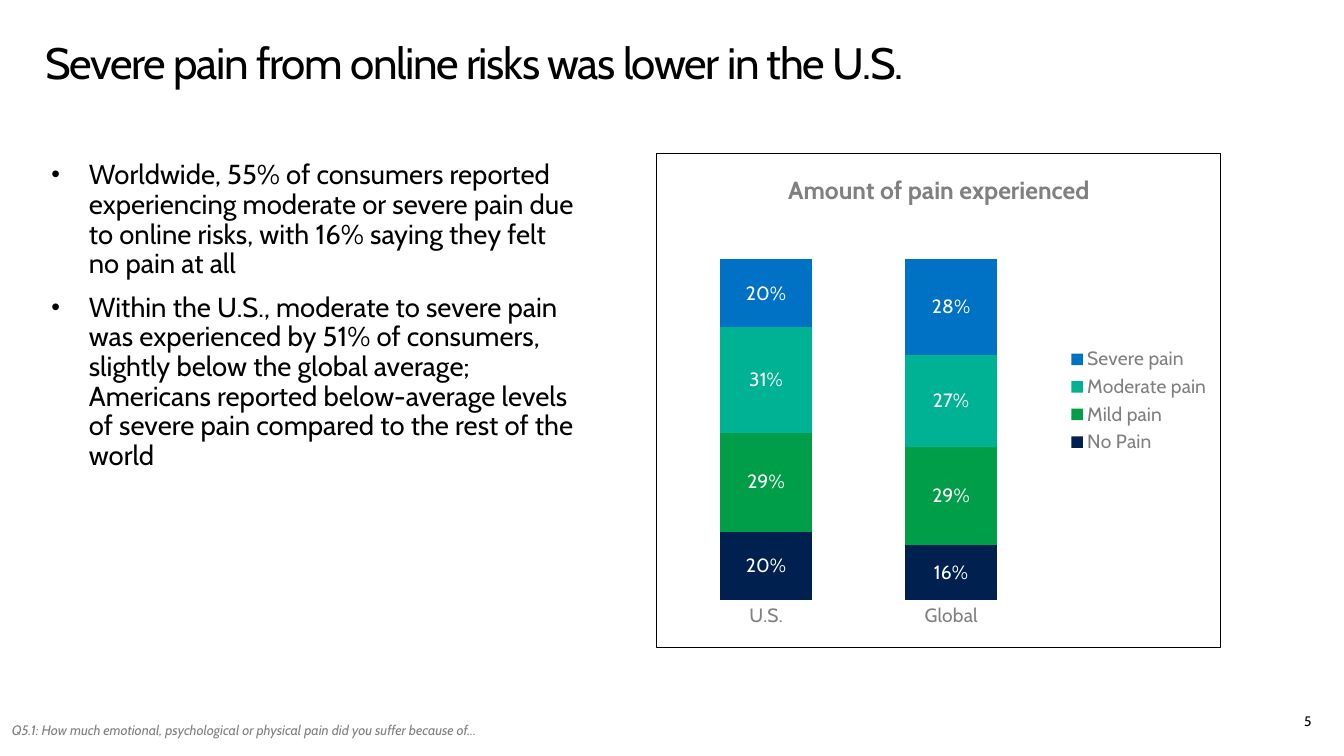
from lxml import etree
from pptx import Presentation
from pptx.chart.data import CategoryChartData
from pptx.dml.color import RGBColor
from pptx.enum.chart import XL_CHART_TYPE, XL_LABEL_POSITION, XL_LEGEND_POSITION, XL_TICK_MARK
from pptx.enum.text import MSO_ANCHOR, PP_ALIGN
from pptx.oxml import parse_xml
from pptx.oxml.ns import nsdecls, qn
from pptx.util import Inches, Pt

FONT = "Cabin"
BLACK = RGBColor(0x00, 0x00, 0x00)
WHITE = RGBColor(0xFF, 0xFF, 0xFF)
GREY = RGBColor(0x80, 0x80, 0x80)
NAVY = RGBColor(0x00, 0x20, 0x50)
GREEN = RGBColor(0x00, 0x9E, 0x49)
TEAL = RGBColor(0x00, 0xB2, 0x94)
BLUE = RGBColor(0x00, 0x72, 0xC6)

BULLETS = [
    "Worldwide, 55% of consumers reported experiencing moderate or severe pain due to online "
    "risks, with 16% saying they felt no pain at all",
    "Within the U.S., moderate to severe pain was experienced by 51% of consumers, slightly "
    "below the global average; Americans reported below-average levels of severe pain compared "
    "to the rest of the world",
]
PAIN_LEVELS = [
    ("No Pain", (0.20, 0.16), NAVY),
    ("Mild pain", (0.29, 0.29), GREEN),
    ("Moderate pain", (0.31, 0.27), TEAL),
    ("Severe pain", (0.20, 0.28), BLUE),
]


def style_font(font, size, color, bold=False, italic=False):
    font.name = FONT
    font.size = Pt(size)
    font.color.rgb = color
    font.bold = bold
    font.italic = italic


def add_text_frame(s, x, y, w, h, inset_x=0.16, inset_y=0.1):
    tf = s.shapes.add_textbox(Inches(x), Inches(y), Inches(w), Inches(h)).text_frame
    tf.word_wrap = True
    tf.margin_left = tf.margin_right = Inches(inset_x)
    tf.margin_top = tf.margin_bottom = Inches(inset_y)
    return tf


def add_run(p, text, size, color, italic=False):
    r = p.add_run()
    r.text = text
    style_font(r.font, size, color, italic=italic)
    return r


def add_title(s, x, y, w, h):
    p = add_text_frame(s, x, y, w, h).paragraphs[0]
    p.line_spacing = 0.9
    r = add_run(p, "Severe pain from online risks was lower in the U.S.", 32, BLACK)
    r.font._element.set("spc", "-100")


def add_bullets(s, x, y, w, h):
    tf = add_text_frame(s, x, y, w, h)
    for i, text in enumerate(BULLETS):
        p = tf.add_paragraph() if i else tf.paragraphs[0]
        p.line_spacing = 0.9
        p.space_before = Pt(4)
        p.space_after = Pt(6)
        pPr = p._p.get_or_add_pPr()
        pPr.set("marL", str(Inches(0.38)))
        pPr.set("indent", str(-Inches(0.38)))
        etree.SubElement(pPr, qn("a:buSzPct")).set("val", "90000")
        etree.SubElement(pPr, qn("a:buFont")).set("typeface", "Arial")
        etree.SubElement(pPr, qn("a:buChar")).set("char", "•")
        add_run(p, text, 20, BLACK)


def frame_chart(chart):
    """Outline the chart area and fix the inner plot area."""
    chart_space = chart._chartSpace
    chart_space.find(qn("c:chart")).addnext(parse_xml(
        f'<c:spPr {nsdecls("c", "a")}><a:noFill/><a:ln w="{Pt(0.75)}"><a:solidFill>'
        f'<a:srgbClr val="{BLACK}"/></a:solidFill></a:ln></c:spPr>'))
    plot_area = chart_space.find(".//" + qn("c:plotArea"))
    for layout in plot_area.findall(qn("c:layout")):
        plot_area.remove(layout)
    layout = etree.Element(qn("c:layout"))
    manual = etree.SubElement(layout, qn("c:manualLayout"))
    for tag, val in (("layoutTarget", "inner"), ("xMode", "edge"), ("yMode", "edge"),
                     ("x", "0.03"), ("y", "0.214"), ("w", "0.656"), ("h", "0.689")):
        etree.SubElement(manual, qn("c:" + tag)).set("val", val)
    plot_area.insert(0, layout)


def add_pain_chart(s, x, y, w, h):
    data = CategoryChartData(number_format="0%")
    data.categories = ["U.S.", "Global"]
    for name, values, _ in PAIN_LEVELS:
        data.add_series(name, values)
    chart = s.shapes.add_chart(XL_CHART_TYPE.COLUMN_STACKED_100, Inches(x), Inches(y),
                               Inches(w), Inches(h), data).chart
    style_font(chart.font, 14, WHITE)

    chart.has_title = True
    r = chart.chart_title.text_frame.paragraphs[0].add_run()
    r.text = "Amount of pain experienced"
    style_font(r.font, 18, GREY, bold=True)
    chart.chart_title.include_in_layout = False

    chart.has_legend = True
    chart.legend.position = XL_LEGEND_POSITION.RIGHT
    chart.legend.include_in_layout = False
    style_font(chart.legend.font, 14, GREY)

    axis = chart.category_axis
    axis.major_tick_mark = XL_TICK_MARK.NONE
    axis.format.line.color.rgb = WHITE
    axis.format.line.width = Pt(0.75)
    style_font(axis.tick_labels.font, 14, GREY)
    chart.value_axis.visible = False
    chart.value_axis.has_major_gridlines = False

    plot = chart.plots[0]
    plot.gap_width = 100
    plot.overlap = 100
    plot.vary_by_categories = False
    for series, (_, _, color) in zip(plot.series, PAIN_LEVELS):
        series.format.fill.solid()
        series.format.fill.fore_color.rgb = color
        labels = series.data_labels
        labels.show_value = True
        labels.position = XL_LABEL_POSITION.CENTER
        labels.number_format = "0%"
        labels.number_format_is_linked = False
        style_font(labels.font, 14, WHITE)
    frame_chart(chart)


def add_source_question(s, x, y, w, h):
    p = add_text_frame(s, x, y, w, h, 0.12, 0.16).paragraphs[0]
    p.line_spacing = 0.9
    add_run(p, "Q5.1: How much emotional, psychological or physical pain did you suffer because of…",
            10, GREY, italic=True)


def add_slide_number(s, x, y, w, h):
    tf = add_text_frame(s, x, y, w, h, 0.1, 0.05)
    tf.vertical_anchor = MSO_ANCHOR.MIDDLE
    p = tf.paragraphs[0]
    p.alignment = PP_ALIGN.RIGHT
    add_run(p, "5", 10, BLACK)


def main():
    prs = Presentation()
    prs.slide_width = Inches(13.6)
    prs.slide_height = Inches(7.65)
    s = prs.slides.add_slide(prs.slide_layouts[6])
    add_title(s, 0.3, 0.32, 13, 1)
    add_slide_number(s, 10.2, 7.09, 3.17, 0.41)
    add_pain_chart(s, 6.64, 1.55, 5.72, 5.01)
    add_bullets(s, 0.36, 1.53, 5.64, 5.65)
    add_source_question(s, 0, 7.25, 5.63, 0.4)
    prs.save("out.pptx")


if __name__ == "__main__":
    main()
